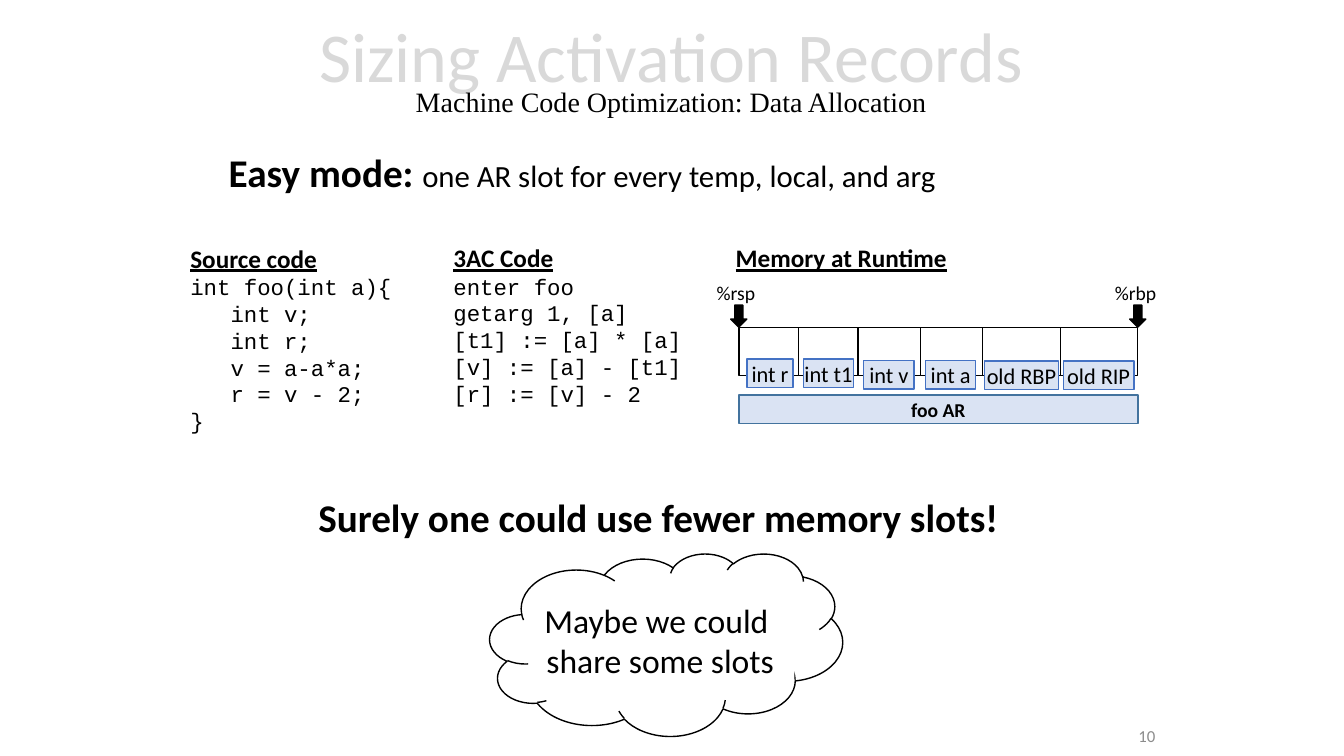
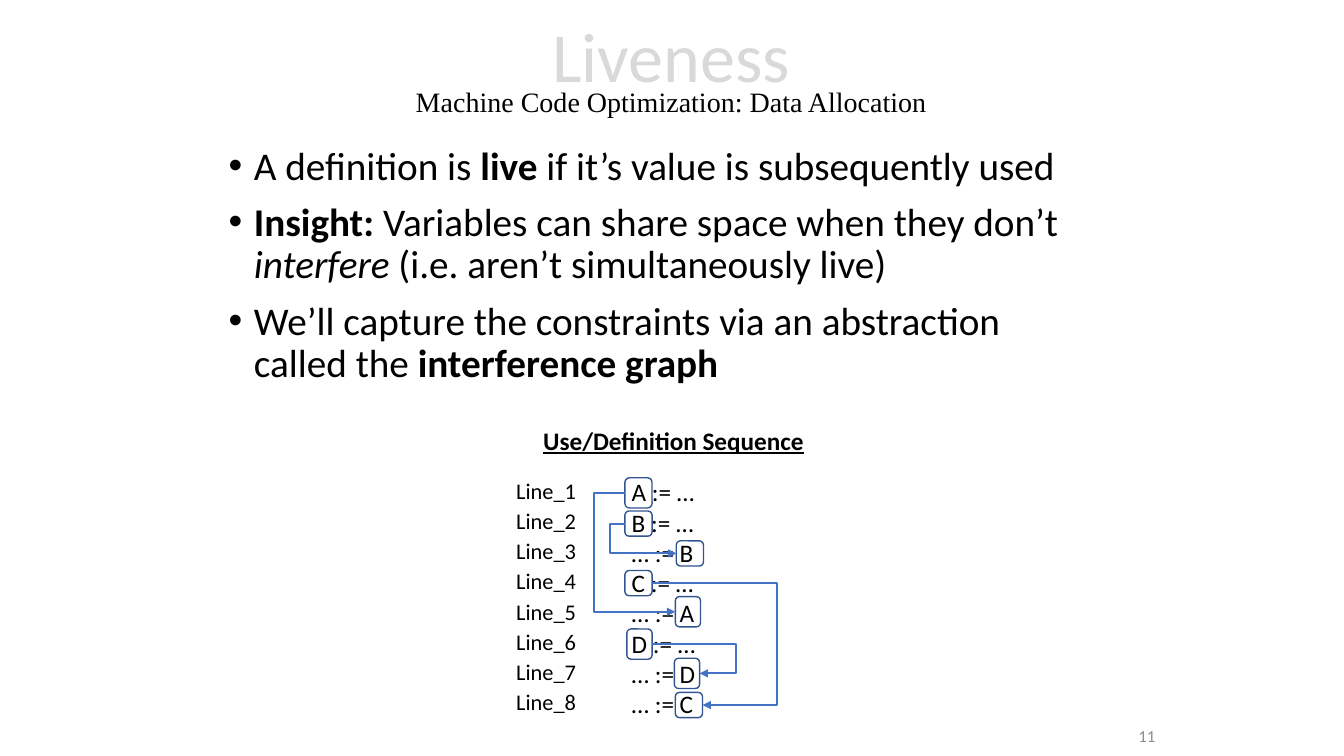
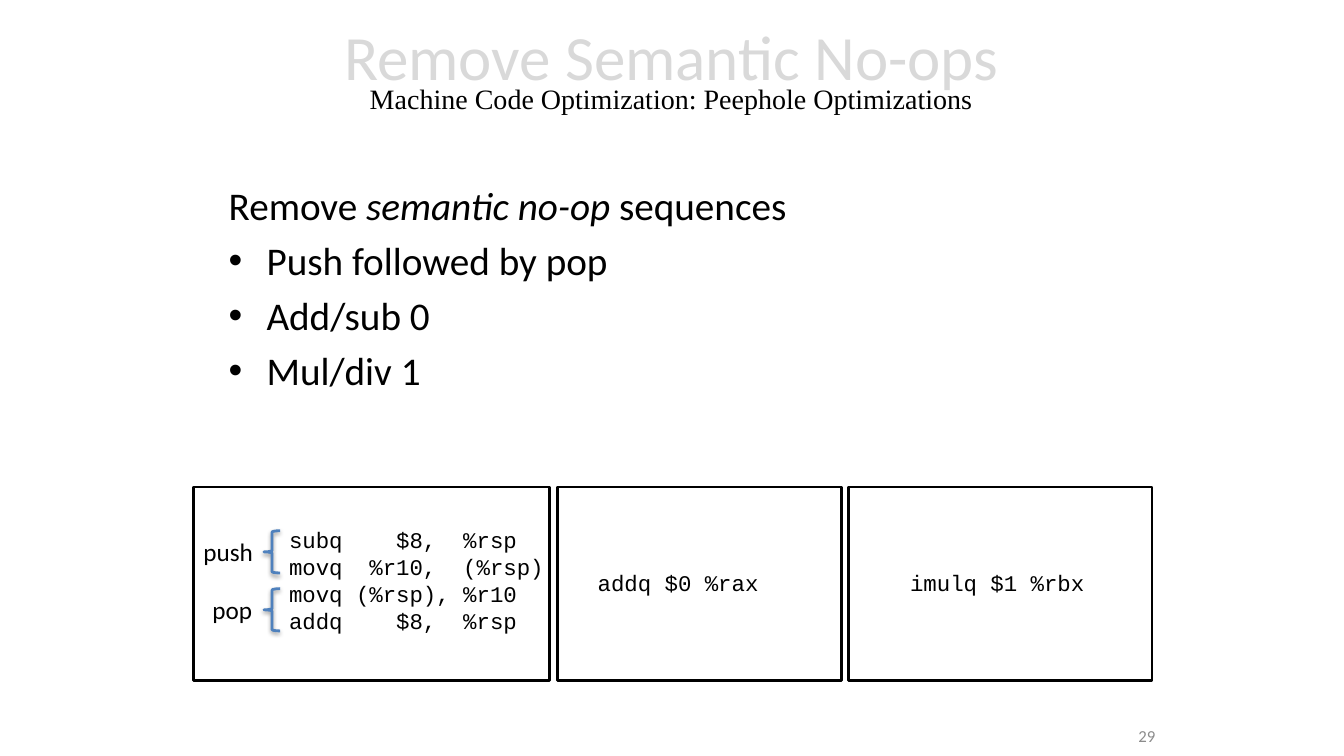
from pptx import Presentation
from pptx.dml.color import RGBColor
from pptx.enum.shapes import MSO_CONNECTOR, MSO_SHAPE
from pptx.enum.text import MSO_ANCHOR, MSO_AUTO_SIZE, PP_ALIGN
from pptx.oxml import parse_xml
from pptx.oxml.ns import nsdecls
from pptx.util import Pt

RECT, ROUNDED, CLOUD = MSO_SHAPE.RECTANGLE, MSO_SHAPE.ROUNDED_RECTANGLE, MSO_SHAPE.CLOUD
DOWN_ARROW, BRACE = MSO_SHAPE.DOWN_ARROW, MSO_SHAPE.LEFT_BRACE
ELBOW = MSO_CONNECTOR.ELBOW
LEFT, CENTER, RIGHT = PP_ALIGN.LEFT, PP_ALIGN.CENTER, PP_ALIGN.RIGHT
MIDDLE = MSO_ANCHOR.MIDDLE
FIXED, GROW = MSO_AUTO_SIZE.NONE, MSO_AUTO_SIZE.SHAPE_TO_FIT_TEXT

BLACK = RGBColor(0x00, 0x00, 0x00)
WHITE = RGBColor(0xFF, 0xFF, 0xFF)
TITLE_GRAY = RGBColor(0xD9, 0xD9, 0xD9)
NUMBER_GRAY = RGBColor(0x8C, 0x8C, 0x8C)
PALE_BLUE = RGBColor(0xDA, 0xE3, 0xF3)
BLUE = RGBColor(0x44, 0x72, 0xC4)
FRAME_BLUE = RGBColor(0x43, 0x73, 0x9E)
DARK_BLUE = RGBColor(0x32, 0x54, 0x91)
BRACE_BLUE = RGBColor(0x4F, 0x81, 0xBD)

SANS, MONO, SERIF = "Calibri", "Courier New", "Times New Roman"
A = nsdecls("a")


def draw(s, kind, box, fill=None, line=None, width=1):
    """Add a preset shape, or a text box when kind is None; box is in points."""
    box = [Pt(v) for v in box]
    if kind is None:
        return s.shapes.add_textbox(*box)
    sp = s.shapes.add_shape(kind, *box)
    sp.shadow.inherit = False
    if fill is None:
        sp.fill.background()
    else:
        sp.fill.solid()
        sp.fill.fore_color.rgb = fill
    if line is None:
        sp.line.fill.background()
    else:
        sp.line.color.rgb = line
        sp.line.width = Pt(width)
    return sp


def write(sp, paras, size=16, font=SANS, align=LEFT, color=BLACK, wrap=False, fit=GROW):
    """Fill sp; a paragraph is a string or a list of (text, "biu" flags, size, font) runs."""
    tf = sp.text_frame
    tf.word_wrap = wrap
    tf.auto_size = fit
    for i, runs in enumerate(paras):
        p = tf.paragraphs[0] if i == 0 else tf.add_paragraph()
        p.alignment = align
        for run in [(runs,)] if isinstance(runs, str) else runs:
            text, flags, run_size, run_font = run + ("", size, font)[len(run) - 1:]
            r = p.add_run()
            r.text = text
            r.font.size = Pt(run_size)
            r.font.name = run_font
            r.font.color.rgb = color
            r.font.bold = "b" in flags
            r.font.italic = "i" in flags
            r.font.underline = "u" in flags
    return tf


prs = Presentation()
prs.slide_width, prs.slide_height = Pt(960), Pt(540)
layout = prs.slide_layouts[1]
title = layout.placeholders[0]
title.left, title.top, title.width, title.height = Pt(169.2), Pt(2.2), Pt(620.6), Pt(104.4)
title.text_frame.vertical_anchor = MIDDLE

# Title, size, subtitle, number, body box, line spacing, space before, indent,
# count of paragraphs without a bullet, body paragraphs
DATA_TOPIC = "Machine Code Optimization: Data Allocation"
SLIDES = [
    ("Sizing Activation Records", 50, DATA_TOPIC, "10",
     (156.2, 105.8, 629.3, 43.9), 0.9, 10, 0, 1,
     [[("Easy mode: ", "b"), ("one AR slot for every temp, local, and arg", "", 22)]]),
    ("Liveness", 50, DATA_TOPIC, "11",
     (156.2, 100.8, 629.3, 356.4), 0.9, 10, 18, 0,
     [[("A definition is ",), ("live", "b"), (" if it’s value is subsequently used",)],
      [("Insight: ", "b"), ("Variables can share space when they don’t ",),
       ("interfere ", "i"), ("(i.e. aren’t simultaneously live)",)],
      [("We’ll capture the constraints via an abstraction called the ",),
       ("interference graph", "b")]]),
    ("Remove Semantic No-ops", 45, "Machine Code Optimization: Peephole Optimizations", "29",
     (156.2, 126, 545.8, 356.4), 1.0, 5.6, 27, 1,
     [[("Remove ",), ("semantic no-op", "i"), (" sequences",)],
      "Push followed by pop", "Add/sub 0", "Mul/div 1"]),
]

for name, name_size, topic, number, box, spacing, before, indent, plain, paras in SLIDES:
    s = prs.slides.add_slide(layout)

    tf = s.shapes.title.text_frame
    tf.auto_size = FIXED
    p = tf.paragraphs[0]
    p.alignment = CENTER
    p.line_spacing = 0.7
    for text, size, font, color in ((name, name_size, SANS, TITLE_GRAY),
                                    (topic, 20, SERIF, BLACK)):
        r = p.add_run()
        r.text = text
        r.font.size = Pt(size)
        r.font.name = font
        r.font.color.rgb = color
        if text == name:
            r._r.get_or_add_rPr().insert(0, parse_xml(
                f'<a:ln {A} w="12700"><a:solidFill><a:srgbClr val="000000"/></a:solidFill></a:ln>'))
            p.add_line_break()

    body = s.placeholders[1]
    body.left, body.top, body.width, body.height = [Pt(v) for v in box]
    tf = write(body, paras, 28, wrap=True, fit=FIXED)
    for i, p in enumerate(tf.paragraphs):
        p.line_spacing = spacing
        p.space_before = Pt(before)
        pPr = p._p.get_or_add_pPr()
        hang = 0 if i < plain else Pt(indent)
        pPr.set("marL", str(hang))
        pPr.set("indent", str(-hang))
        if i < plain:
            pPr.append(parse_xml(f"<a:buNone {A}/>"))

    tf = write(draw(s, None, (670.3, 511.2, 162, 28.8)), [number], 12,
               align=RIGHT, color=NUMBER_GRAY, wrap=True, fit=FIXED)
    tf.vertical_anchor = MIDDLE

sizing, liveness, noops = prs.slides

# Activation records: code listings
s = sizing
for box, heading, code in (
    ((128.9, 169.9, 160.6, 145.4), "Source code",
     ["int foo(int a){", "   int v;", "   int r;", "   v = a-a*a;", "   r = v - 2;", "}"]),
    ((316.8, 169.6, 180, 126), "3AC Code",
     ["enter foo", "getarg 1, [a]", "[t1] := [a] * [a]", "[v] := [a] - [t1]",
      "[r] := [v] - 2"]),
    ((518.4, 169.9, 166.3, 28.8), "Memory at Runtime", []),
):
    write(draw(s, None, box), [[(heading, "bu", 18, SANS)]] + code, font=MONO)

# Memory slots: label, slot width, label left, label top, label width
SLOTS = [
    ("int r", 42.5, 533.5, 256.3, 33.1),
    ("int t1", 42.5, 573.8, 256.3, 36),
    ("int v", 44.6, 617, 257.4, 36),
    ("int a", 44.6, 661, 257.4, 36),
    ("old RBP", 55.4, 703.4, 257.8, 52.6),
    ("old RIP", 55.4, 759.6, 257.8, 50.4),
]
MEMORY_LEFT, MEMORY_TOP = 527.8, 234
x = MEMORY_LEFT
for _, width, *_ in SLOTS:
    draw(s, RECT, (x, MEMORY_TOP, width, 34.2), WHITE, BLACK)
    x += width
memory_right = x
for label, _, left, top, width in SLOTS:
    sp = draw(s, RECT, (left, top, width, 20.5), PALE_BLUE, BLUE)
    tf = write(sp, [label], align=CENTER, wrap=True, fit=FIXED)
    tf.margin_left = tf.margin_right = 0
frame = draw(s, RECT, (MEMORY_LEFT, 282.2, memory_right - MEMORY_LEFT, 20.2),
             PALE_BLUE, FRAME_BLUE)
write(frame, [[("foo AR", "b")]], 14, align=CENTER, wrap=True, fit=FIXED)

for register, left, edge in (("%rsp", 511.9, MEMORY_LEFT), ("%rbp", 796.3, memory_right)):
    draw(s, DOWN_ARROW, (edge - 5.8, 217.9, 11.5, 15.8), BLACK, BLACK)
    tf = write(draw(s, None, (left, 200.5, 32, 17.3)), [register], 14)
    tf.margin_left = tf.margin_right = tf.margin_top = tf.margin_bottom = 0

write(draw(s, None, (209.5, 348.5, 521.3, 41)),
      [[("Surely one could use fewer memory slots!", "b")]], 28, align=CENTER, wrap=True)
draw(s, CLOUD, (349.9, 395.3, 252, 130.3), WHITE, BLACK)
draw(s, RECT, (538.6, 442.8, 28.8, 43.2), WHITE)
write(draw(s, None, (360, 424.8, 223.2, 65.5)),
      ["Maybe we could ", "share some slots"], 24, align=CENTER, wrap=True)

# Liveness: each definition joined to its use
s = liveness
write(draw(s, None, (380.9, 300.2, 202.3, 28.8)), [[("Use/Definition Sequence", "bu")]], 18)
SEQUENCE = ["A := …", "B := …", "… := B", "C := …", "… := A", "D := …", "… := D", "… := C"]
write(draw(s, None, (444.2, 337, 64.8, 181.4)), SEQUENCE, 18)
for i in range(len(SEQUENCE)):
    write(draw(s, None, (361, 337 + 21.6 * i, 57.6, 26.6)), [f"Line_{i + 1}"], align=RIGHT)

# Definition box, use box, joined side, x of the bend
LIFETIMES = [
    ((446.4, 341.3, 19.4, 21.6), (482.4, 426.2, 18, 21.6), 1, 424.1),
    ((446.4, 365, 19.4, 18), (483.1, 386.3, 19.4, 18), 1, 435.6),
    ((446.4, 407.5, 19.4, 18), (482.4, 494.6, 19.4, 18), 3, 555.1),
    ((447.8, 449.3, 18, 21.6), (481.7, 470.2, 18, 21.6), 3, 525.6),
]
for definition_box, use_box, side, bend in LIFETIMES:
    definition = draw(s, ROUNDED, definition_box, line=DARK_BLUE)
    use = draw(s, ROUNDED, use_box, line=DARK_BLUE)
    arrow = s.shapes.add_connector(ELBOW, 0, 0, 0, 0)
    arrow.begin_connect(definition, side)
    arrow.end_connect(use, side)
    arrow.line.color.rgb = BLUE
    arrow.line.width = Pt(1.5)
    arrow.line._get_or_add_ln().append(parse_xml(f'<a:tailEnd {A} type="triangle"/>'))
    spPr = arrow._element.spPr
    spPr.append(parse_xml(f"<a:effectLst {A}/>"))
    adjust = round((Pt(bend) - arrow.begin_x) / (arrow.end_x - arrow.begin_x) * 100000)
    spPr.prstGeom.get_or_add_avLst().append(
        parse_xml(f'<a:gd {A} name="adj1" fmla="val {adjust}"/>'))

# No-ops: panel left, panel width, code box, code
s = noops
for left, width, box, code in (
    (138.2, 254.2, (199.4, 372.2, 208.8, 85),
     ["subq    $8,  %rsp", "movq  %r10,  (%rsp)", "movq (%rsp), %r10", "addq    $8,  %rsp"]),
    (398.2, 203, (419.8, 403.2, 131, 26.6), ["addq $0 %rax"]),
    (606.2, 216.7, (643, 403.2, 141.1, 26.6), ["imulq $1 %rbx"]),
):
    draw(s, RECT, (left, 347.8, width, 138.2), WHITE, BLACK, 2)
    write(draw(s, None, box), code, font=MONO)

for label, left, width, top in (("push", 138.2, 50.4, 379.1), ("pop", 144.7, 43.2, 420.5)):
    write(draw(s, None, (left, top + 0.5, width, 28.8)), [label], 18)
    brace = draw(s, BRACE, (188.6, top, 11.5, 30.2), line=BRACE_BLUE, width=2)
    brace._element.spPr.find("{*}effectLst").append(parse_xml(
        f'<a:outerShdw {A} blurRad="40000" dist="20000" dir="5400000" rotWithShape="0">'
        '<a:srgbClr val="000000"><a:alpha val="38000"/></a:srgbClr></a:outerShdw>'))

prs.save("out.pptx")
